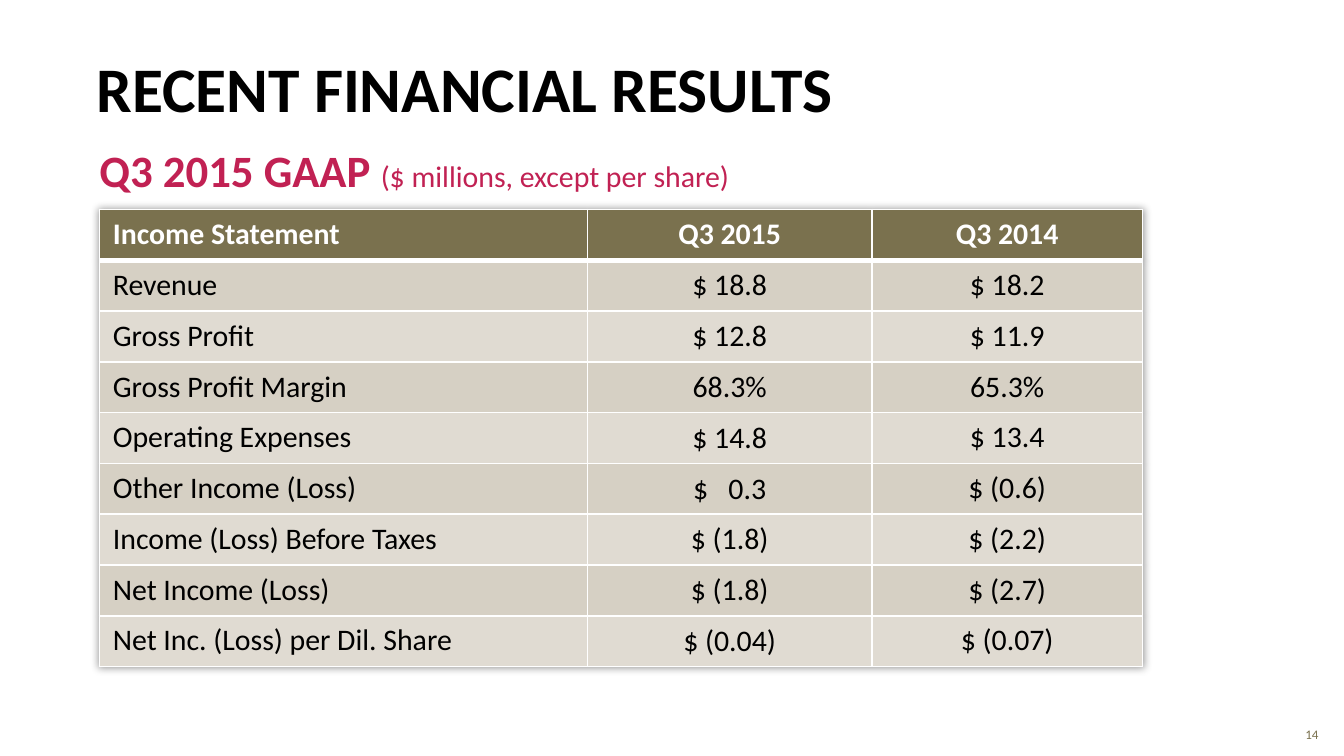
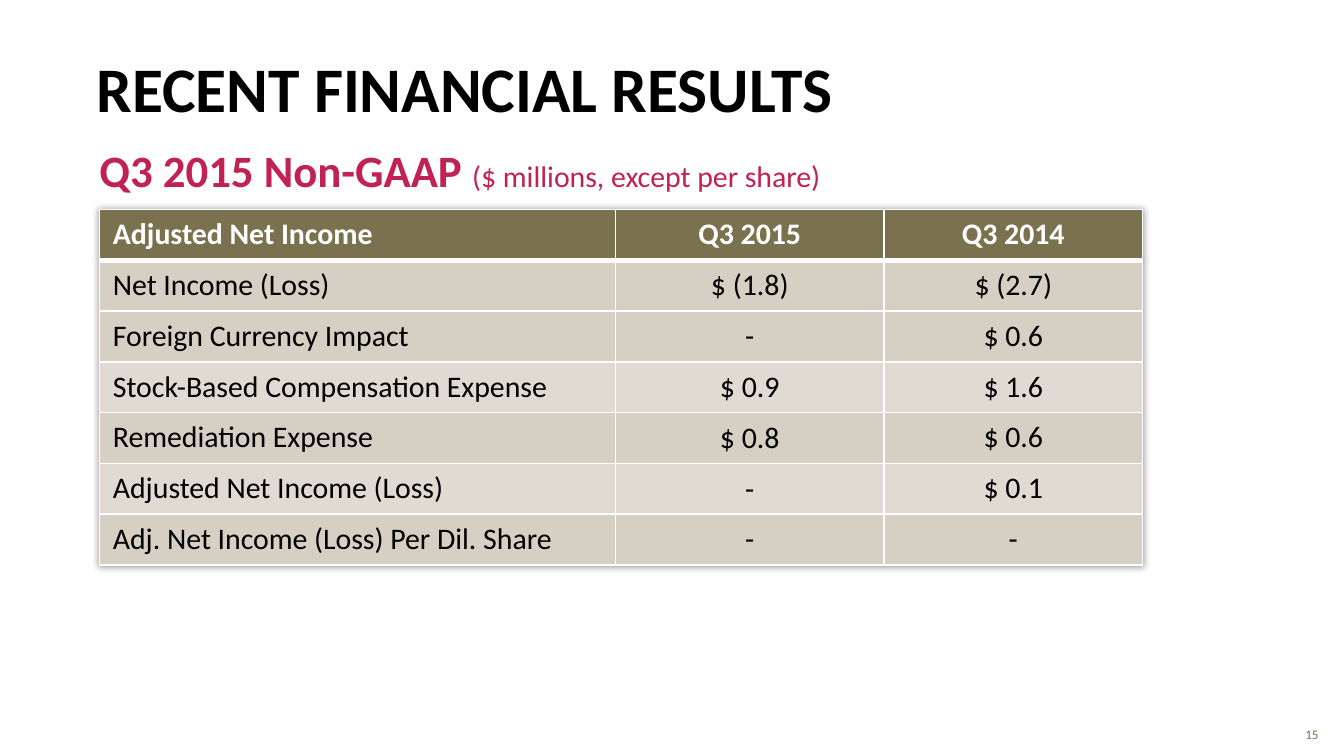
from dataclasses import dataclass
from typing import NamedTuple, Optional, Union

from lxml.etree import SubElement
from pptx import Presentation
from pptx.dml.color import RGBColor
from pptx.enum.text import MSO_ANCHOR as Anchor, PP_ALIGN as Align
from pptx.oxml import parse_xml
from pptx.oxml.ns import nsdecls, qn
from pptx.util import Cm, Pt


# Theme: colours and type sizes
@dataclass(frozen=True)
class Theme:
    font: str = "Calibri"
    title: str = "000000"
    accent: str = "C12153"
    header: str = "7A714E"
    header_text: str = "FFFFFF"
    body_text: str = "000000"
    bands: tuple[str, str] = ("D6D0C4", "E0DBD2")
    border: str = "FFFFFF"
    title_size: float = 34
    subtitle_size: float = 24
    body_size: float = 16
    page_size: float = 7
    thin: float = 1
    thick: float = 3


THEME = Theme()


class Box(NamedTuple):
    left: float
    top: float
    width: float
    height: float


class Padded(NamedTuple):
    """An amount set apart from its currency sign."""
    sign: str
    amount: str
    spacing: float


Value = Union[str, Padded]


@dataclass(frozen=True)
class Results:
    basis: str
    page: str
    heading: str
    col_widths: tuple[float, float, float]
    rows: list[tuple[str, Value, Value]]
    band_start: int = 0


# Shared layout, in centimetres
TITLE_BOX = Box(1.57, 0.28, 18.95, 2.21)
SUBTITLE_BOX = Box(1.63, 2.77, 22.91, 1.02)
PAGE_BOX = Box(19.25, 13.39, 5.92, 0.76)
TABLE_LEFT, TABLE_TOP, ROW_HEIGHT = 1.88, 3.96, 0.96
LINE_SPACING = 0.8

TITLE = "RECENT FINANCIAL RESULTS"
UNITS = "($ millions, except per share)"
PERIODS = ("Q3 2015", "Q3 2014")

SLIDES = [
    Results("Q3 2015 GAAP ", "14", "Income Statement", (9.22, 5.38, 5.11), [
        ("Revenue", "$ 18.8", "$ 18.2"),
        ("Gross Profit", "$ 12.8", "$ 11.9"),
        ("Gross Profit Margin", "68.3%", "65.3%"),
        ("Operating Expenses", "$ 14.8", "$ 13.4"),
        ("Other Income (Loss)", Padded("$ ", "0.3", 3.6), "$ (0.6)"),
        ("Income (Loss) Before Taxes", "$ (1.8)", "$ (2.2)"),
        ("Net Income (Loss)", "$ (1.8)", "$ (2.7)"),
        ("Net Inc. (Loss) per Dil. Share", "$ (0.04)", "$ (0.07)"),
    ]),
    Results("Q3 2015 Non-GAAP ", "15", "Adjusted Net Income", (9.75, 5.08, 4.88), [
        ("Net Income (Loss)", "$ (1.8)", "$ (2.7)"),
        ("Foreign Currency Impact", "-", "$ 0.6"),
        ("Stock-Based Compensation Expense", "$ 0.9", "$ 1.6"),
        ("Remediation Expense", "$ 0.8", "$ 0.6"),
        ("Adjusted Net Income (Loss)", "-", "$ 0.1"),
        ("Adj. Net Income (Loss) Per Dil. Share", "-", "-"),
    ], band_start=1),
]


# Text helpers
def add_run(p, text: str, size: float, color: str, bold: bool = False):
    r = p.add_run()
    r.text = text
    r.font.name = THEME.font
    r.font.size = Pt(size)
    r.font.bold = bold
    r.font.color.rgb = RGBColor.from_string(color)
    return r


def place(sp, box: Box) -> None:
    sp.left, sp.top, sp.width, sp.height = (Cm(v) for v in box)


def set_paragraph(sp, anchor: Anchor, align: Align, spacing: Optional[float] = None):
    tf = sp.text_frame
    tf.word_wrap = True
    tf.vertical_anchor = anchor
    p = tf.paragraphs[0]
    p.alignment = align
    p.line_spacing = spacing
    return p


def add_text_box(slide, box: Box):
    return slide.shapes.add_textbox(*(Cm(v) for v in box))


# Table helpers
def set_borders(cell, top: float, bottom: float) -> None:
    tc_pr = cell._tc.get_or_add_tcPr()
    sides = {"L": THEME.thin, "R": THEME.thin, "T": top, "B": bottom}
    for side, width in sides.items():
        ln = SubElement(tc_pr, qn(f"a:ln{side}"), w=str(Pt(width)))
        fill = SubElement(ln, qn("a:solidFill"))
        SubElement(fill, qn("a:srgbClr"), val=THEME.border)


def add_shadow(table) -> None:
    table._tbl.tblPr.insert(0, parse_xml(
        f'<a:effectLst {nsdecls("a")}>'
        '<a:outerShdw blurRad="50800" dist="0" dir="0" algn="ctr" rotWithShape="0">'
        '<a:srgbClr val="000000"><a:alpha val="40000"/></a:srgbClr>'
        '</a:outerShdw></a:effectLst>'))


def fill_cell(cell, value: Value, fill: str, color: str, bold: bool, align: Align) -> None:
    cell.fill.solid()
    cell.fill.fore_color.rgb = RGBColor.from_string(fill)
    p = cell.text_frame.paragraphs[0]
    p.alignment = align
    if isinstance(value, Padded):
        r = add_run(p, value.sign, THEME.body_size, color, bold)
        r.font._element.set("spc", str(round(value.spacing * 100)))
        value = value.amount
    add_run(p, value, THEME.body_size, color, bold)


def add_results_table(slide, results: Results) -> None:
    rows = [(results.heading, *PERIODS), *results.rows]
    widths = results.col_widths
    frame = slide.shapes.add_table(
        len(rows), len(widths), Cm(TABLE_LEFT), Cm(TABLE_TOP),
        Cm(sum(widths)), Cm(ROW_HEIGHT * len(rows)))
    table = frame.table
    table.horz_banding = False
    add_shadow(table)
    for col, width in zip(table.columns, widths):
        col.width = Cm(width)
    for i, values in enumerate(rows):
        table.rows[i].height = Cm(ROW_HEIGHT)
        is_header = i == 0
        band = max(i - 1 - results.band_start, 0) % 2
        fill = THEME.header if is_header else THEME.bands[band]
        color = THEME.header_text if is_header else THEME.body_text
        for j, value in enumerate(values):
            cell = table.cell(i, j)
            # The rule under the header is shared with the first body row
            set_borders(cell, THEME.thick if i == 1 else THEME.thin,
                        THEME.thick if is_header else THEME.thin)
            if j == 1 and not is_header:
                cell.vertical_anchor = Anchor.MIDDLE
            fill_cell(cell, value, fill, color, is_header,
                      Align.CENTER if j else Align.LEFT)


# Slide
def add_results_slide(prs, results: Results) -> None:
    slide = prs.slides.add_slide(prs.slide_layouts[5])

    # Title
    title = slide.shapes.title
    place(title, TITLE_BOX)
    p = set_paragraph(title, Anchor.BOTTOM, Align.LEFT, LINE_SPACING)
    add_run(p, TITLE, THEME.title_size, THEME.title, bold=True)

    # Subtitle
    sp = add_text_box(slide, SUBTITLE_BOX)
    p = set_paragraph(sp, Anchor.TOP, Align.LEFT, LINE_SPACING)
    add_run(p, results.basis, THEME.subtitle_size, THEME.accent, bold=True)
    add_run(p, UNITS, THEME.body_size, THEME.accent)

    # Page number
    sp = add_text_box(slide, PAGE_BOX)
    p = set_paragraph(sp, Anchor.BOTTOM, Align.RIGHT)
    add_run(p, results.page, THEME.page_size, THEME.header)

    add_results_table(slide, results)


def main() -> None:
    prs = Presentation()
    prs.slide_width, prs.slide_height = Cm(25.4), Cm(14.29)
    for results in SLIDES:
        add_results_slide(prs, results)
    prs.save("out.pptx")


if __name__ == "__main__":
    main()
